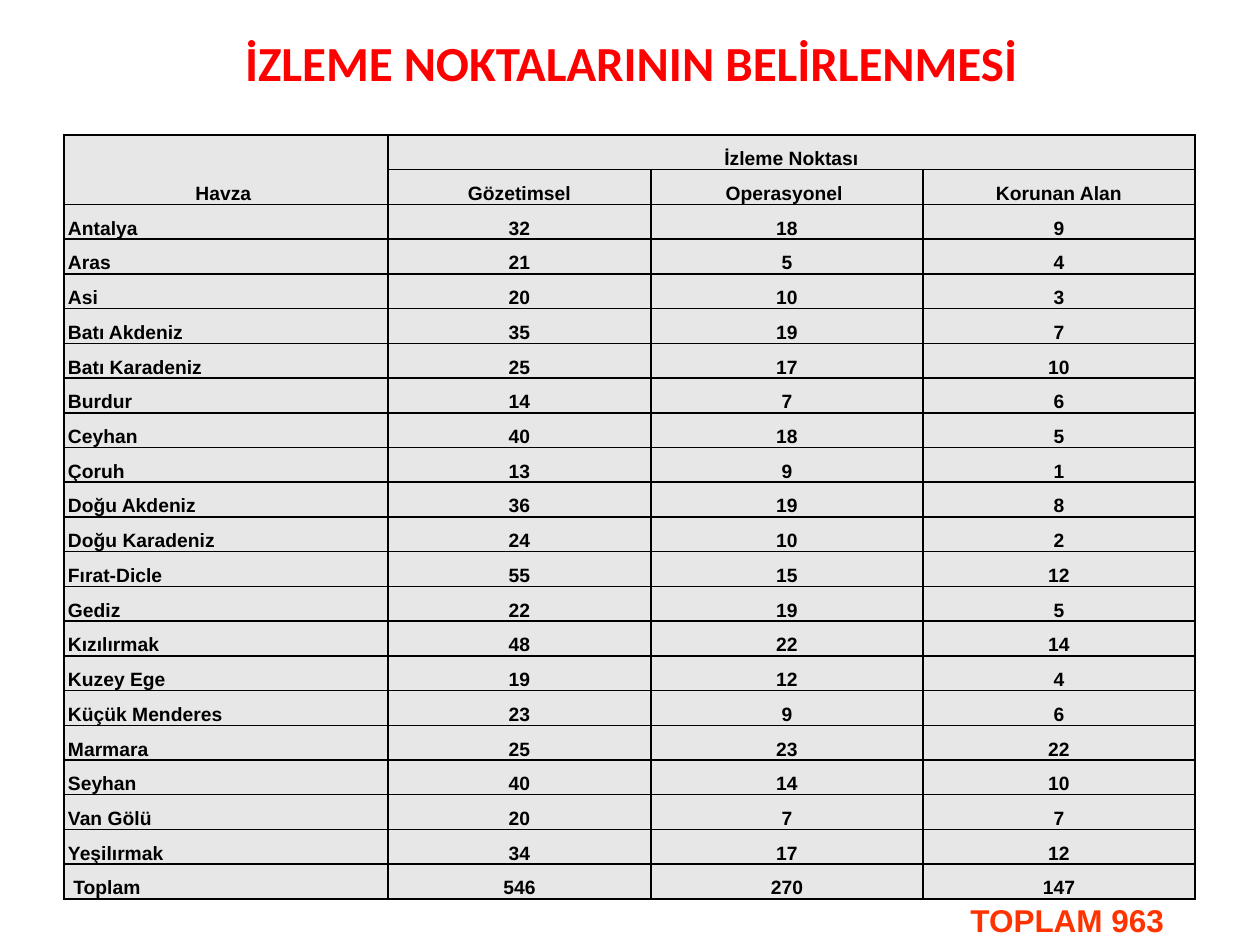
from lxml.etree import SubElement
from pptx import Presentation
from pptx.dml.color import RGBColor
from pptx.enum.text import MSO_ANCHOR, MSO_AUTO_SIZE, PP_ALIGN
from pptx.oxml.ns import qn
from pptx.util import Emu, Pt

COLORS = {"title": "FF0000", "total": "FF3300", "ink": "000000", "cell": "E7E7E7"}
COLUMN_WIDTHS = [324, 263, 272, 272]
HEADINGS = [
    ("Havza ", "İzleme Noktası", "", ""),
    ("", "Gözetimsel", "Operasyonel ", "Korunan Alan"),
]
BASINS = [
    ("Antalya", 32, 18, 9),
    ("Aras", 21, 5, 4),
    ("Asi", 20, 10, 3),
    ("Batı Akdeniz", 35, 19, 7),
    ("Batı Karadeniz", 25, 17, 10),
    ("Burdur", 14, 7, 6),
    ("Ceyhan", 40, 18, 5),
    ("Çoruh", 13, 9, 1),
    ("Doğu Akdeniz", 36, 19, 8),
    ("Doğu Karadeniz", 24, 10, 2),
    ("Fırat-Dicle", 55, 15, 12),
    ("Gediz", 22, 19, 5),
    ("Kızılırmak", 48, 22, 14),
    ("Kuzey Ege", 19, 12, 4),
    ("Küçük Menderes", 23, 9, 6),
    ("Marmara", 25, 23, 22),
    ("Seyhan", 40, 14, 10),
    ("Van Gölü", 20, 7, 7),
    ("Yeşilırmak", 34, 17, 12),
    (" Toplam", 546, 270, 147),
]


def px(length):
    return Emu(round(length * 914400 / 126))


class SlideWriter:
    """Holds the style and the current slide, and adds each kind of element."""

    def __init__(self, slide, colors):
        self.slide = slide
        self.colors = colors

    def color(self, name):
        return RGBColor.from_string(self.colors[name])

    def run(self, paragraph, text, size, font, color):
        run = paragraph.add_run()
        run.text = text
        run.font.size = Pt(size)
        run.font.name = font
        run.font.bold = True
        run.font.color.rgb = self.color(color)

    def label(self, box, text, size, font, color, align=PP_ALIGN.LEFT):
        frame = self.slide.shapes.add_textbox(*map(px, box)).text_frame
        frame.word_wrap = True
        frame.auto_size = MSO_AUTO_SIZE.SHAPE_TO_FIT_TEXT
        frame.paragraphs[0].alignment = align
        self.run(frame.paragraphs[0], text, size, font, color)

    def borders(self, cell):
        properties = cell._tc.get_or_add_tcPr()
        for side in ("a:lnL", "a:lnR", "a:lnT", "a:lnB"):
            line = SubElement(properties, qn(side), w=str(Pt(1)))
            fill = SubElement(line, qn("a:solidFill"))
            SubElement(fill, qn("a:srgbClr"), val=self.colors["ink"])

    def cell(self, cell, text, align):
        self.borders(cell)
        cell.fill.solid()
        cell.fill.fore_color.rgb = self.color("cell")
        cell.vertical_anchor = MSO_ANCHOR.BOTTOM
        cell.margin_left = cell.margin_right = px(4)
        cell.margin_top = cell.margin_bottom = 0
        paragraph = cell.text_frame.paragraphs[0]
        paragraph.alignment = align
        paragraph.line_spacing = 1.5
        if text:
            self.run(paragraph, text, 11, "Arial", "ink")

    def table(self, left, top, height, widths, headings, records):
        rows = headings + records
        table = self.slide.shapes.add_table(
            len(rows), len(widths), px(left), px(top), px(sum(widths)), px(height)
        ).table
        for column, width in zip(table.columns, widths):
            column.width = px(width)
        for r, values in enumerate(rows):
            table.rows[r].height = px(height / len(rows))
            for c, value in enumerate(values):
                is_name = c == 0 and r >= len(headings)
                align = PP_ALIGN.LEFT if is_name else PP_ALIGN.CENTER
                self.cell(table.cell(r, c), str(value), align)
        return table


def main():
    deck = Presentation()
    deck.slide_width, deck.slide_height = px(1260), px(945)
    writer = SlideWriter(deck.slides.add_slide(deck.slide_layouts[6]), COLORS)
    writer.label((174, 26, 914, 72), "İZLEME NOKTALARININ BELİRLENMESİ",
                 28, "Calibri", "title", PP_ALIGN.CENTER)
    points = writer.table(64, 135, 763, COLUMN_WIDTHS, HEADINGS, BASINS)
    points.cell(0, 0).merge(points.cell(1, 0))
    points.cell(0, 1).merge(points.cell(0, 3))
    writer.label((958, 895, 258, 50), "TOPLAM 963", 18, "Arial", "total")
    deck.save("out.pptx")


if __name__ == "__main__":
    main()
